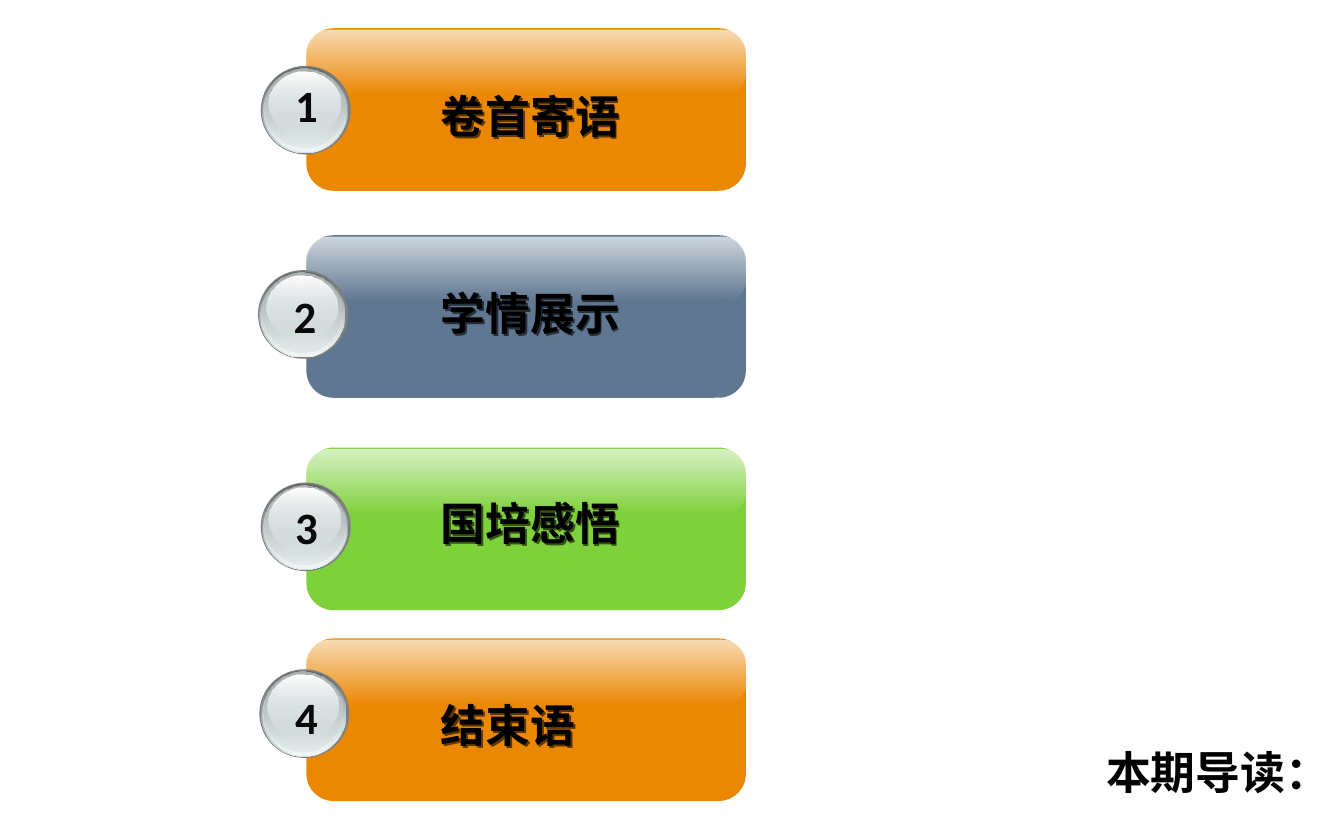
from lxml.etree import SubElement
from pptx import Presentation
from pptx.dml.color import RGBColor
from pptx.enum.shapes import MSO_SHAPE as Shape
from pptx.enum.text import MSO_ANCHOR as Anchor, MSO_AUTO_SIZE as AutoSize, PP_ALIGN as Align
from pptx.oxml.ns import qn
from pptx.util import Inches, Pt

ORANGE = RGBColor(0xEB, 0x88, 0x03)
SLATE = RGBColor(0x5F, 0x77, 0x91)
GREEN = RGBColor(0x7F, 0xD1, 0x3B)
WHITE = RGBColor(0xFF, 0xFF, 0xFF)
BLACK = RGBColor(0, 0, 0)
INK = RGBColor(0x08, 0x08, 0x08)
GRAY = RGBColor(0x80, 0x80, 0x80)
STEEL = RGBColor(0x63, 0x68, 0x69)
SILVER = RGBColor(0xAA, 0xB2, 0xB3)
MIST = RGBColor(0xD6, 0xE1, 0xE2)
PALE = RGBColor(0xF1, 0xF5, 0xF5)

# Content: label, colour, card top, label top, badge (left, top), number (left, top)
HEADING = "本期导读："
SECTIONS = [
    ("卷首寄语", ORANGE, 0.21, 0.61, (1.94, 0.49), (2.07, 0.53)),
    ("学情展示", SLATE, 1.75, 2.08, (1.92, 2.01), (2.06, 2.10)),
    ("国培感悟", GREEN, 3.33, 3.64, (1.94, 3.59), (2.07, 3.67)),
    ("结束语", ORANGE, 4.75, 5.14, (1.93, 4.98), (2.07, 5.08)),
]
CARD_LEFT, CARD_WIDTH, CARD_HEIGHT, GLOSS_HEIGHT = 2.28, 3.27, 1.21, 0.49
LABEL_LEFT, LABEL_WIDTH, NUMBER_WIDTH, LINE_HEIGHT = 3.18, 1.82, 0.42, 0.5

# Badge layers: offset x, offset y, width, height, (colour, opacity %) from top to bottom
BADGE_LAYERS = [
    (0, 0, 0.67, 0.66, [(GRAY, 100)]),
    (0.01, 0.01, 0.64, 0.64, [(STEEL, 100), (MIST, 100)]),
    (0.02, 0.02, 0.62, 0.62, [(MIST, 0), (PALE, 100)]),
    (0.03, 0.02, 0.59, 0.59, [(SILVER, 100), (MIST, 48)]),
    (0.06, 0.04, 0.53, 0.47, [(WHITE, 100), (MIST, 38)]),
]


def add_layer(group, kind, left, top, width, height, colours, corner=None):
    layer = group.shapes.add_shape(kind, Inches(left), Inches(top), Inches(width), Inches(height))
    layer.shadow.inherit = False
    layer.line.fill.background()
    if corner is not None:
        layer.adjustments[0] = corner
    if len(colours) == 1:
        layer.fill.solid()
        layer.fill.fore_color.rgb = colours[0][0]
        return
    layer.fill.gradient()
    layer.fill.gradient_angle = 270
    for position, (stop, (colour, opacity)) in enumerate(zip(layer.fill.gradient_stops, colours)):
        stop.position = position
        stop.color.rgb = colour
    # Opacity of each gradient stop
    stops = layer._element.spPr.iter(qn("a:srgbClr"))
    for stop_colour, (colour, opacity) in zip(stops, colours):
        if opacity < 100:
            SubElement(stop_colour, qn("a:alpha"), val=str(opacity * 1000))


def write_line(box, text, font_name, colour, align=Align.LEFT, wrap=True):
    frame = box.text_frame
    frame.word_wrap = wrap
    frame.auto_size = AutoSize.SHAPE_TO_FIT_TEXT
    frame.vertical_anchor = Anchor.TOP
    line = frame.paragraphs[0]
    line.alignment = align
    run = line.add_run()
    run.text = text
    run.font.name = font_name
    run.font.size = Pt(24)
    run.font.bold = True
    run.font.color.rgb = colour


def add_text(slide, left, top, width):
    return slide.shapes.add_textbox(Inches(left), Inches(top), Inches(width), Inches(LINE_HEIGHT))


def add_text_shadow(box):
    effects = SubElement(box._element.spPr, qn("a:effectLst"))
    shadow = SubElement(effects, qn("a:outerShdw"), dist=str(Inches(0.02)), dir="2700000", algn="ctr")
    shade = SubElement(shadow, qn("a:srgbClr"), val=str(BLACK))
    SubElement(shade, qn("a:alpha"), val="60000")


def main():
    deck = Presentation()
    deck.slide_width, deck.slide_height = Inches(10), Inches(6.25)
    slide = deck.slides.add_slide(deck.slide_layouts[5])

    # Heading
    heading = slide.shapes.title
    heading.left, heading.top = Inches(8.13), Inches(5.49)
    heading.width, heading.height = Inches(1.88), Inches(LINE_HEIGHT)
    write_line(heading, HEADING, "Arial", BLACK, wrap=False)

    for number, section in enumerate(SECTIONS, 1):
        text, colour, card_top, label_top, badge_at, number_at = section

        # Card with a glossy upper half
        card = slide.shapes.add_group_shape()
        add_layer(card, Shape.ROUNDED_RECTANGLE, CARD_LEFT, card_top, CARD_WIDTH, CARD_HEIGHT,
                  [(colour, 100)], 0.167)
        add_layer(card, Shape.ROUNDED_RECTANGLE, CARD_LEFT, card_top + 0.01, CARD_WIDTH, GLOSS_HEIGHT,
                  [(WHITE, 70), (colour, 70)], 0.365)

        # Round badge
        badge = slide.shapes.add_group_shape()
        for dx, dy, width, height, colours in BADGE_LAYERS:
            add_layer(badge, Shape.OVAL, badge_at[0] + dx, badge_at[1] + dy, width, height, colours)

        # Label and number
        label = add_text(slide, LABEL_LEFT, label_top, LABEL_WIDTH)
        write_line(label, text, "Arial", BLACK)
        add_text_shadow(label)
        write_line(add_text(slide, *number_at, NUMBER_WIDTH), str(number), "Calibri", INK, Align.CENTER)

    deck.save("out.pptx")


if __name__ == "__main__":
    main()
